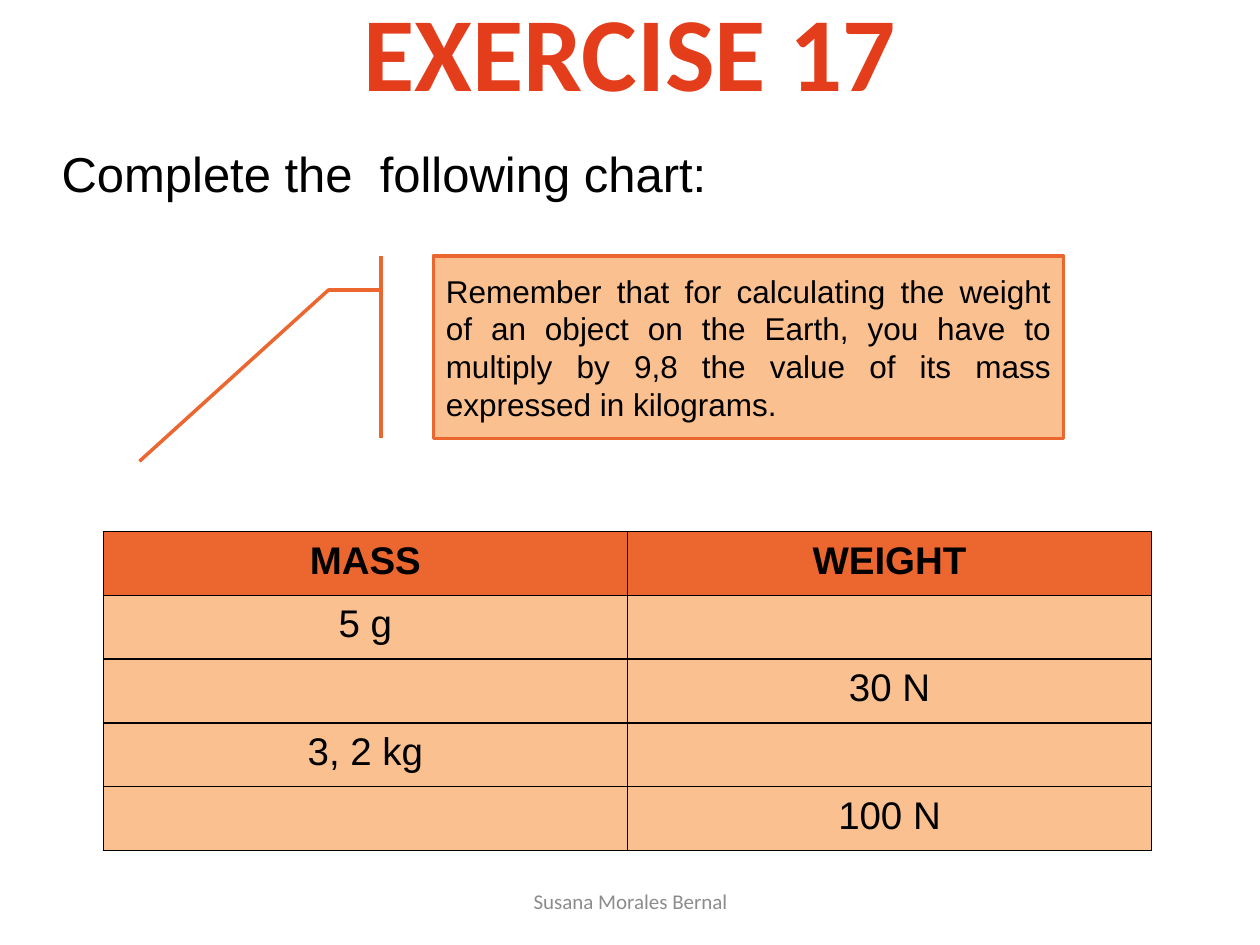
from dataclasses import dataclass

from lxml import etree
from pptx import Presentation
from pptx.dml.color import RGBColor
from pptx.enum.shapes import MSO_SHAPE
from pptx.enum.text import MSO_ANCHOR, PP_ALIGN
from pptx.oxml.ns import qn
from pptx.util import Inches, Pt

CENTER, LEFT, JUSTIFY = PP_ALIGN.CENTER, PP_ALIGN.LEFT, PP_ALIGN.JUSTIFY
TOP, MIDDLE = MSO_ANCHOR.TOP, MSO_ANCHOR.MIDDLE
CALLOUT = MSO_SHAPE.LINE_CALLOUT_2_BORDER_AND_ACCENT_BAR

BLACK = RGBColor(0x00, 0x00, 0x00)
RED = RGBColor(0xE4, 0x3D, 0x1C)
ORANGE = RGBColor(0xEC, 0x66, 0x30)
PEACH = RGBColor(0xFA, 0xC0, 0x90)
GRAY = RGBColor(0x8C, 0x8C, 0x8C)

ROWS = [("MASS", "WEIGHT"), ("5 g", ""), ("", "30 N"), ("3, 2 kg", ""), ("", "100 N")]


@dataclass(frozen=True)
class Style:
    size: float
    font: str = "Arial"
    color: RGBColor = BLACK
    bold: bool = False
    align: PP_ALIGN = CENTER
    anchor: MSO_ANCHOR = MIDDLE


TITLE = Style(60, "Calibri", RED, bold=True)
INSTRUCTION = Style(28, align=LEFT, anchor=TOP)
REMINDER = Style(18, align=JUSTIFY)
HEADER = Style(22, bold=True)
VALUE = Style(22)
FOOTER = Style(12, "Calibri", GRAY)


def box(left: float, top: float, width: float, height: float) -> list:
    return [Inches(value) for value in (left, top, width, height)]


def write(frame, text: str, style: Style) -> None:
    paragraph = frame.paragraphs[0]
    paragraph.text = text
    paragraph.alignment = style.align
    formats = {"name": style.font, "size": Pt(style.size), "bold": style.bold}
    for name, value in formats.items():
        setattr(paragraph.font, name, value)
    paragraph.font.color.rgb = style.color


def add_text(slide, bounds: list, text: str, style: Style) -> None:
    frame = slide.shapes.add_textbox(*bounds).text_frame
    frame.word_wrap = True
    frame.vertical_anchor = style.anchor
    write(frame, text, style)


def add_borders(cell) -> None:
    properties = cell._tc.get_or_add_tcPr()
    for side in ("lnL", "lnR", "lnT", "lnB"):
        line = etree.SubElement(properties, qn(f"a:{side}"), w=str(Pt(1)))
        fill = etree.SubElement(line, qn("a:solidFill"))
        etree.SubElement(fill, qn("a:srgbClr"), val=str(BLACK))


def add_mass_table(slide) -> None:
    bounds = box(0.82, 4.22, 8.32, 2.53)
    table = slide.shapes.add_table(len(ROWS), len(ROWS[0]), *bounds).table
    margins = {
        "margin_left": Inches(0.12), "margin_right": Inches(0.12),
        "margin_top": Inches(0.06), "margin_bottom": Inches(0.06),
    }
    for row_index, row in enumerate(ROWS):
        style, color = (VALUE, PEACH) if row_index else (HEADER, ORANGE)
        for column_index, text in enumerate(row):
            cell = table.cell(row_index, column_index)
            for name, value in margins.items():
                setattr(cell, name, value)
            add_borders(cell)
            cell.fill.solid()
            cell.fill.fore_color.rgb = color
            write(cell.text_frame, text, style)


def add_reminder(slide, text: str) -> None:
    callout = slide.shapes.add_shape(CALLOUT, *box(3.44, 2.03, 5, 1.45))
    callout.shadow.inherit = False
    callout.fill.solid()
    callout.fill.fore_color.rgb = PEACH
    callout.line.color.rgb = ORANGE
    callout.line.width = Pt(2)
    callout.text_frame.word_wrap = True
    callout.text_frame.vertical_anchor = REMINDER.anchor
    write(callout.text_frame, text, REMINDER)


def main() -> None:
    presentation = Presentation()
    presentation.slide_width, presentation.slide_height = Inches(10), Inches(7.5)
    slide = presentation.slides.add_slide(presentation.slide_layouts[5])

    title = slide.shapes.title
    title.left, title.top, title.width, title.height = box(0.5, -0.23, 9, 1.25)
    title.text_frame.vertical_anchor = TITLE.anchor
    write(title.text_frame, "EXERCISE 17", TITLE)

    add_text(slide, box(0.39, 1.09, 6.48, 0.57), "Complete the  following chart:", INSTRUCTION)
    add_mass_table(slide)
    add_reminder(
        slide,
        "Remember that for calculating the weight of an object on the Earth, "
        "you have to multiply by 9,8 the value of its mass expressed in kilograms.",
    )
    add_text(slide, box(3.42, 6.95, 3.17, 0.4), "Susana Morales Bernal", FOOTER)
    presentation.save("out.pptx")


if __name__ == "__main__":
    main()
